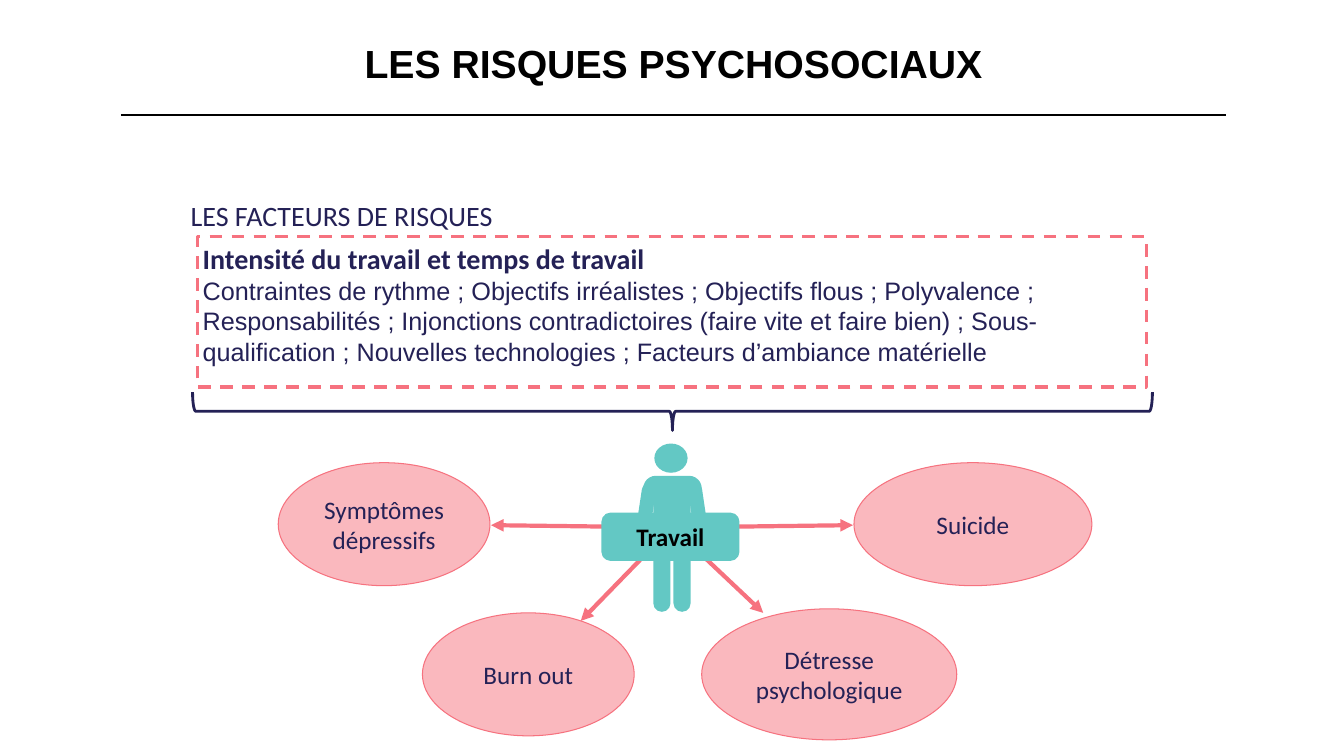
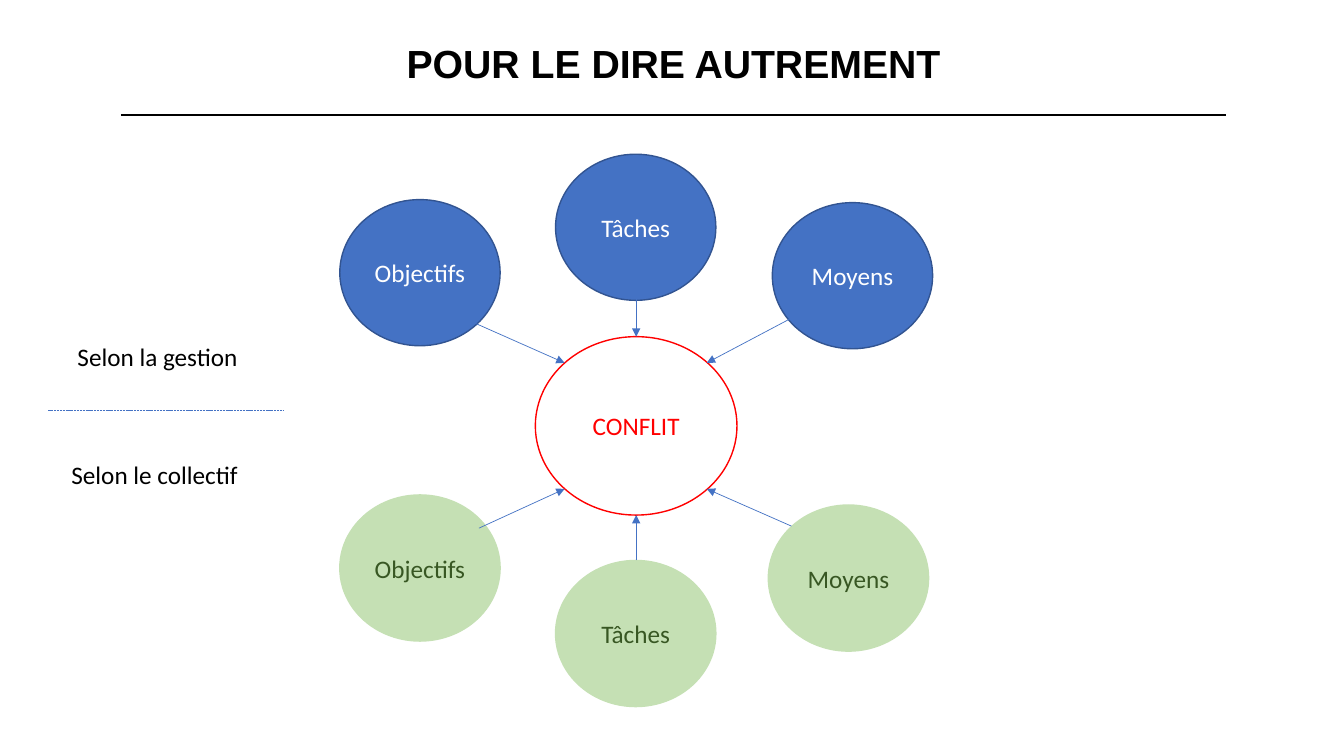
from dataclasses import dataclass

from lxml import etree
from pptx import Presentation
from pptx.dml.color import RGBColor
from pptx.enum.dml import MSO_LINE
from pptx.enum.shapes import MSO_CONNECTOR, MSO_SHAPE
from pptx.enum.text import MSO_ANCHOR, PP_ALIGN
from pptx.oxml.ns import qn
from pptx.util import Inches, Pt

RECTANGLE = MSO_SHAPE.RECTANGLE
ROUNDED = MSO_SHAPE.ROUNDED_RECTANGLE
ELLIPSE = MSO_SHAPE.OVAL
BRACE = MSO_SHAPE.LEFT_BRACE
STRAIGHT = MSO_CONNECTOR.STRAIGHT
DASH, SHORT_DASH = MSO_LINE.DASH, MSO_LINE.SQUARE_DOT
TOP, MIDDLE = MSO_ANCHOR.TOP, MSO_ANCHOR.MIDDLE
LEFT, CENTER = PP_ALIGN.LEFT, PP_ALIGN.CENTER


@dataclass(frozen=True)
class Theme:
    black: str = "000000"
    white: str = "FFFFFF"
    navy: str = "242156"
    coral: str = "F6727F"
    teal: str = "63C8C4"
    blue: str = "4472C4"
    dark_blue: str = "325491"
    light_green: str = "C5E0B4"
    dark_green: str = "385723"
    red: str = "FF0000"
    title_font: str = "Arial"
    body_font: str = "Calibri"
    title_size: int = 28
    heading_size: int = 20
    body_size: int = 18


THEME = Theme()


def add_box(slide, box, lines=(), preset=None, fill=None, opacity=100, line=None,
            width=1, dash=None, align=CENTER, anchor=MIDDLE, inset=0.1, wrap=True):
    """Add a preset shape, or a text box; lines are (text, size, colour, bold, font)."""
    frame = [Inches(value) for value in box]
    if preset is None:
        shape = slide.shapes.add_textbox(*frame)
    else:
        shape = slide.shapes.add_shape(preset, *frame)
        shape.shadow.inherit = False
        if fill:
            shape.fill.solid()
            shape.fill.fore_color.rgb = RGBColor.from_string(fill)
            if opacity < 100:
                color = shape.element.spPr.find(qn("a:solidFill"))[0]
                etree.SubElement(color, qn("a:alpha"), val=str(opacity * 1000))
        else:
            shape.fill.background()
        if line:
            shape.line.color.rgb = RGBColor.from_string(line)
            shape.line.width = Pt(width)
            if dash:
                shape.line.dash_style = dash
        else:
            shape.line.fill.background()
    text_frame = shape.text_frame
    text_frame.word_wrap = wrap
    text_frame.vertical_anchor = anchor
    text_frame.margin_left = text_frame.margin_right = Inches(inset)
    text_frame.text = "\n".join(text for text, *_ in lines)
    for paragraph, (_, size, color, bold, font) in zip(text_frame.paragraphs, lines):
        paragraph.alignment = align
        for run in paragraph.runs:
            run.font.size = Pt(size)
            run.font.bold = bold
            run.font.name = font
            run.font.color.rgb = RGBColor.from_string(color)
    return shape


def add_line(slide, start, end, color, width, arrow=False, dash=None):
    """Add a straight line, with an arrowhead at its end if wanted."""
    connector = slide.shapes.add_connector(
        STRAIGHT, *[Inches(value) for value in (*start, *end)])
    connector.line.color.rgb = RGBColor.from_string(color)
    connector.line.width = Pt(width)
    if dash:
        connector.line.dash_style = dash
    properties = connector.element.spPr
    if arrow:
        etree.SubElement(properties.find(qn("a:ln")), qn("a:tailEnd"), type="triangle")
    etree.SubElement(properties, qn("a:effectLst"))


presentation = Presentation()
presentation.slide_width = Inches(13.33)
presentation.slide_height = Inches(7.5)

# Title and rule on every slide
slides = []
for title in ("LES RISQUES PSYCHOSOCIAUX", "POUR LE DIRE AUTREMENT"):
    slide = presentation.slides.add_slide(presentation.slide_layouts[6])
    add_box(slide, (0.48, 0.34, 12.4, 0.57),
            [(title, THEME.title_size, THEME.black, True, THEME.title_font)], anchor=TOP)
    add_line(slide, (1.2, 1.14), (12.16, 1.14), THEME.black, 1.5)
    slides.append(slide)
risks_slide, conflict_slide = slides

# Risk factors
add_box(risks_slide, (1.84, 1.92, 8.85, 0.44),
        [("LES FACTEURS DE RISQUES", THEME.heading_size, THEME.navy, False, THEME.body_font)],
        align=LEFT, anchor=TOP, inset=0.05)
add_box(risks_slide, (1.96, 2.35, 9.41, 1.49), [
    ("Intensité du travail et temps de travail",
     THEME.heading_size, THEME.navy, True, THEME.body_font),
    ("Contraintes de rythme ; Objectifs irréalistes ; Objectifs flous ; Polyvalence ; "
     "Responsabilités ; Injonctions contradictoires (faire vite et faire bien) ; "
     "Sous-qualification ; Nouvelles technologies ; Facteurs d’ambiance matérielle",
     THEME.body_size, THEME.navy, False, THEME.title_font),
], RECTANGLE, line=THEME.coral, width=2.25, dash=DASH, align=LEFT, anchor=TOP, inset=0.05)
brace = add_box(risks_slide, (6.48, -0.68, 0.38, 9.52), preset=BRACE,
                line=THEME.navy, width=2)
brace.rotation = 270

# Consequences, each with the arrow that leads to it
consequences = [
    ("Symptômes dépressifs", (2.76, 4.59, 2.1, 1.22), (6.48, 5.23), (4.87, 5.21)),
    ("Burn out", (4.19, 6.08, 2.1, 1.22), (6.48, 5.42), (5.76, 6.16)),
    ("Suicide", (8.47, 4.59, 2.36, 1.22), (6.86, 5.23), (8.46, 5.21)),
    ("Détresse psychologique", (6.96, 6.04, 2.53, 1.3), (6.86, 5.41), (7.57, 6.08)),
]
for label, box, start, end in consequences:
    add_box(risks_slide, box,
            [(label, THEME.body_size, THEME.navy, False, THEME.body_font)],
            ELLIPSE, fill=THEME.coral, opacity=50, line=THEME.coral, width=0.75, inset=0.05)
    add_line(risks_slide, start, end, THEME.coral, 3, arrow=True)

# Worker: head, then limbs and trunk with their rotation
add_box(risks_slide, (6.49, 4.4, 0.33, 0.29), preset=ELLIPSE, fill=THEME.teal)
body_parts = [
    ((6.33, 4.79, 0.14, 0.62), 8.6),
    ((6.48, 5.14, 0.17, 0.93), 0),
    ((6.68, 5.14, 0.17, 0.93), 0),
    ((6.48, 4.79, 0.37, 0.62), 0),
    ((6.38, 4.72, 0.58, 0.25), 0),
    ((6.86, 4.79, 0.14, 0.63), 351.6),
]
for box, rotation in body_parts:
    body_part = add_box(risks_slide, box, preset=ROUNDED, fill=THEME.teal)
    body_part.adjustments[0] = 0.5
    body_part.rotation = rotation
add_box(risks_slide, (5.98, 5.1, 1.34, 0.45),
        [("Travail", THEME.body_size, THEME.black, True, THEME.body_font)],
        ROUNDED, fill=THEME.teal, line=THEME.teal, width=2, inset=0.05)

# Conflict in the centre
add_box(conflict_slide, (5.31, 3.34, 2, 1.77),
        [("CONFLIT", THEME.body_size, THEME.red, False, THEME.body_font)],
        ELLIPSE, line=THEME.red)

# Management above and work group below: circle position, arrow start and end
management = (THEME.blue, THEME.dark_blue, THEME.white)
work_group = (THEME.light_green, THEME.light_green, THEME.dark_green)
viewpoints = [
    ("Objectifs", management, (3.37, 1.98), (4.72, 3.21), (5.6, 3.6)),
    ("Moyens", management, (7.66, 2.01), (7.88, 3.14), (7.01, 3.6)),
    ("Tâches", management, (5.51, 1.53), (6.31, 2.97), (6.31, 3.34)),
    ("Objectifs", work_group, (3.37, 4.91), (4.75, 5.24), (5.6, 4.85)),
    ("Moyens", work_group, (7.62, 5.01), (7.85, 5.22), (7.01, 4.85)),
    ("Tâches", work_group, (5.51, 5.56), (6.31, 5.56), (6.31, 5.11)),
]
for label, (fill, line, color), position, start, end in viewpoints:
    add_box(conflict_slide, (*position, 1.59, 1.45),
            [(label, THEME.body_size, color, False, THEME.body_font)],
            ELLIPSE, fill=fill, line=line)
    add_line(conflict_slide, start, end, THEME.blue, 0.5, arrow=True)

# Side labels and the line between them
add_line(conflict_slide, (0.48, 4.07), (2.82, 4.07), THEME.blue, 0.5, dash=SHORT_DASH)
for label, box in (("Selon la gestion", (0.67, 3.34, 1.81, 0.4)),
                   ("Selon le collectif", (0.61, 4.51, 1.87, 0.4))):
    add_box(conflict_slide, box,
            [(label, THEME.body_size, THEME.black, False, THEME.body_font)],
            align=LEFT, anchor=TOP, wrap=False)

presentation.save("out.pptx")
